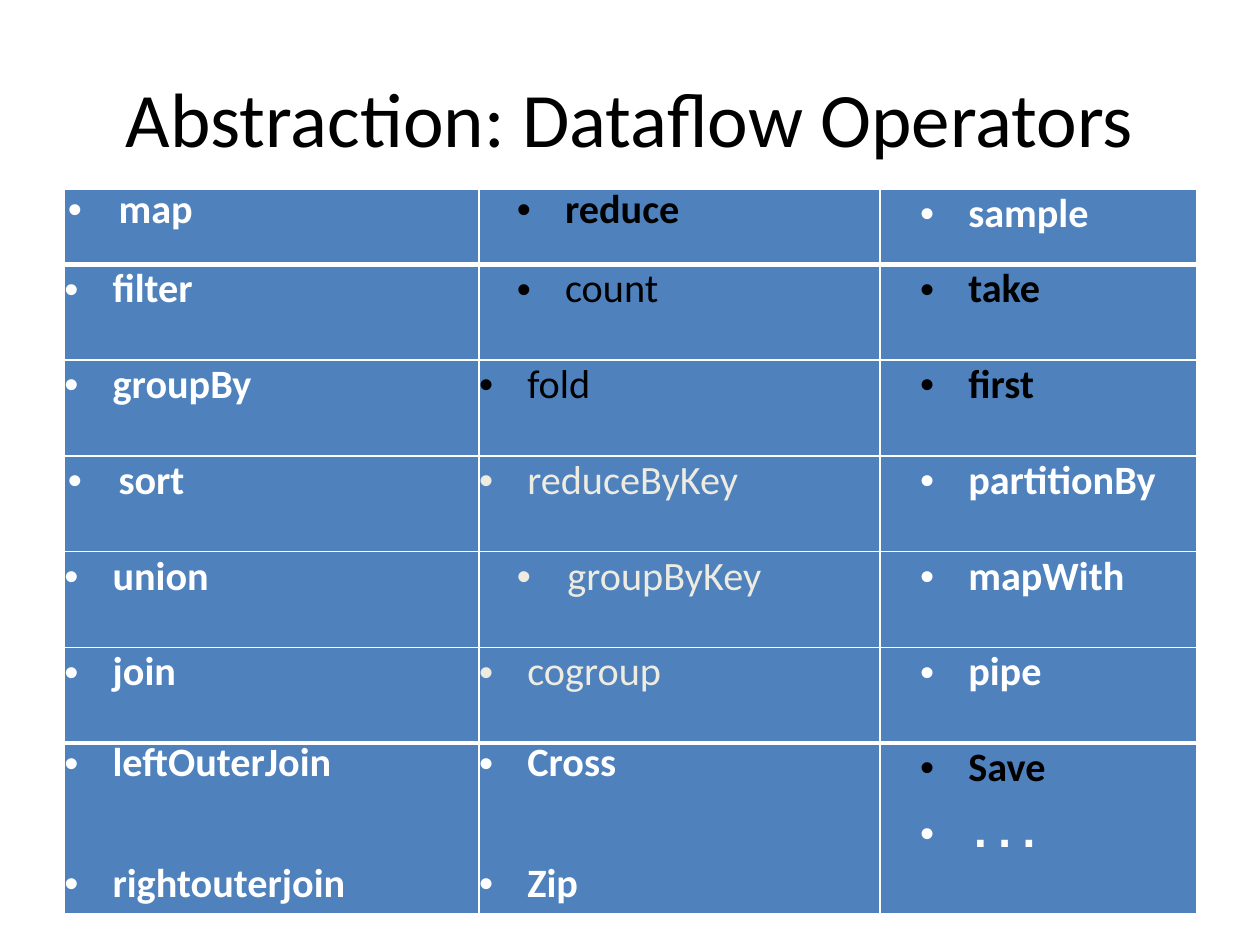
from dataclasses import dataclass

from lxml import etree
from pptx import Presentation
from pptx import util as u
from pptx.dml.color import RGBColor
from pptx.enum import text
from pptx.oxml import ns

BLUE = RGBColor(0x4F, 0x81, 0xBD)
WHITE = RGBColor(0xFF, 0xFF, 0xFF)
BLACK = RGBColor(0x00, 0x00, 0x00)
CREAM = RGBColor(0xEE, 0xEC, 0xE1)

FONT = "Calibri"
MONO_FONT = "DejaVu Sans Mono"
NEAR, NEAR_WIDE = (0.97, 0.97), (1.09, 1.02)
FAR, FAR_WIDE = (1.73, 0.97), (1.78, 1.02)
THIRD = (1.78, 0.97)

COLUMN_WIDTHS = (8.36, 8.08, 6.38)
ROW_HEIGHTS = (1.52,) + (1.93,) * 5 + (3.45,)
ROW_SPACE = (0, 9, 9, 9.2, 9, 9.2, 9)
ROW_LINE_SPACING = {0: 26, 6: 25.5}
THICK_EDGES = {(0, "B"), (1, "T"), (5, "B"), (6, "T")}


@dataclass
class Operator:
    """One bulleted operator name and its look."""
    name: str
    indent: tuple = NEAR
    color: RGBColor = WHITE
    bold: bool = True
    font: str = FONT


OPERATORS = (
    ([Operator("map", NEAR_WIDE)], [Operator("reduce", FAR, BLACK)],
     [Operator("sample", THIRD)]),
    ([Operator("filter")], [Operator("count", FAR, BLACK, False)],
     [Operator("take", THIRD, BLACK)]),
    ([Operator("groupBy")], [Operator("fold", NEAR, BLACK, False)],
     [Operator("first", THIRD, BLACK)]),
    ([Operator("sort", NEAR_WIDE)], [Operator("reduceByKey", NEAR, CREAM, False)],
     [Operator("partitionBy", THIRD)]),
    ([Operator("union")], [Operator("groupByKey", FAR_WIDE, CREAM, False)],
     [Operator("mapWith", THIRD)]),
    ([Operator("join")], [Operator("cogroup", NEAR, CREAM, False)],
     [Operator("pipe", THIRD)]),
    ([Operator("leftOuterJoin"), Operator("rightouterjoin")],
     [Operator("Cross"), Operator("Zip")],
     [Operator("Save", THIRD, BLACK), Operator("...", THIRD, font=MONO_FONT)]),
)


def add_run(paragraph, words, size, color, bold=False, font=FONT):
    """Add one formatted run to a paragraph."""
    run = paragraph.add_run()
    run.text = words
    run.font.name = font
    run.font.size = u.Pt(size)
    run.font.bold = bold
    run.font.color.rgb = color


def set_bullet(paragraph, indent):
    """Give a paragraph a round bullet and a hanging indent in centimetres."""
    left, hanging = indent
    properties = paragraph._p.get_or_add_pPr()
    properties.set("marL", str(u.Cm(left)))
    properties.set("indent", str(-u.Cm(hanging)))
    etree.SubElement(properties, ns.qn("a:buFont"), typeface="Arial")
    etree.SubElement(properties, ns.qn("a:buChar"), char="•")


def set_borders(cell, row):
    """Draw white cell borders, thick along the first and last row rules."""
    properties = cell._tc.get_or_add_tcPr()
    for position, side in enumerate("LRTB"):
        width = u.Pt(3 if (row, side) in THICK_EDGES else 1)
        line = etree.Element(ns.qn(f"a:ln{side}"), w=str(width))
        fill = etree.SubElement(line, ns.qn("a:solidFill"))
        etree.SubElement(fill, ns.qn("a:srgbClr"), val=str(WHITE))
        properties.insert(position, line)


def fill_cell(cell, operators, row, column):
    """Format one cell and list its operators."""
    cell.fill.solid()
    cell.fill.fore_color.rgb = BLUE
    cell.margin_left = cell.margin_right = cell.margin_top = cell.margin_bottom = 0
    set_borders(cell, row)
    frame = cell.text_frame
    is_third = column == 2
    for index, operator in enumerate(operators):
        paragraph = frame.add_paragraph() if index else frame.paragraphs[0]
        space = ROW_SPACE[row] + (0.9 if is_third else 0)
        if not is_third:
            line_spacing = ROW_LINE_SPACING.get(row)
            if line_spacing:
                paragraph.line_spacing = u.Pt(line_spacing)
            if index:
                space += line_spacing + ROW_SPACE[row]
        paragraph.space_before = u.Pt(space)
        set_bullet(paragraph, operator.indent)
        add_run(paragraph, operator.name, 23, operator.color, operator.bold, operator.font)


def place_title(slide, left, top, width, height):
    """Place the slide title in the given box."""
    title = slide.shapes.title
    title.left, title.top, title.width, title.height = map(u.Cm, (left, top, width, height))
    frame = title.text_frame
    frame.word_wrap = True
    frame.vertical_anchor = text.MSO_ANCHOR.MIDDLE
    paragraph = frame.paragraphs[0]
    paragraph.alignment = text.PP_ALIGN.CENTER
    add_run(paragraph, "Abstraction: Dataflow Operators", 44, BLACK)


def place_operator_table(slide, left, top):
    """Place the operator table with its corner at the given point."""
    table = slide.shapes.add_table(
        len(ROW_HEIGHTS), len(COLUMN_WIDTHS), u.Cm(left), u.Cm(top),
        u.Cm(sum(COLUMN_WIDTHS)), u.Cm(sum(ROW_HEIGHTS))).table
    table.horz_banding = False
    for column, width in zip(table.columns, COLUMN_WIDTHS):
        column.width = u.Cm(width)
    for row, height in zip(table.rows, ROW_HEIGHTS):
        row.height = u.Cm(height)
    for row, cells in enumerate(OPERATORS):
        for column, operators in enumerate(cells):
            fill_cell(table.cell(row, column), operators, row, column)


def main():
    """Build and save the presentation."""
    presentation = Presentation()
    presentation.slide_width, presentation.slide_height = u.Cm(25.4), u.Cm(19.05)
    slide = presentation.slides.add_slide(presentation.slide_layouts[5])
    place_title(slide, 1.27, 0.76, 22.86, 3.18)
    place_operator_table(slide, 1.3, 3.81)
    presentation.save("out.pptx")


if __name__ == "__main__":
    main()
